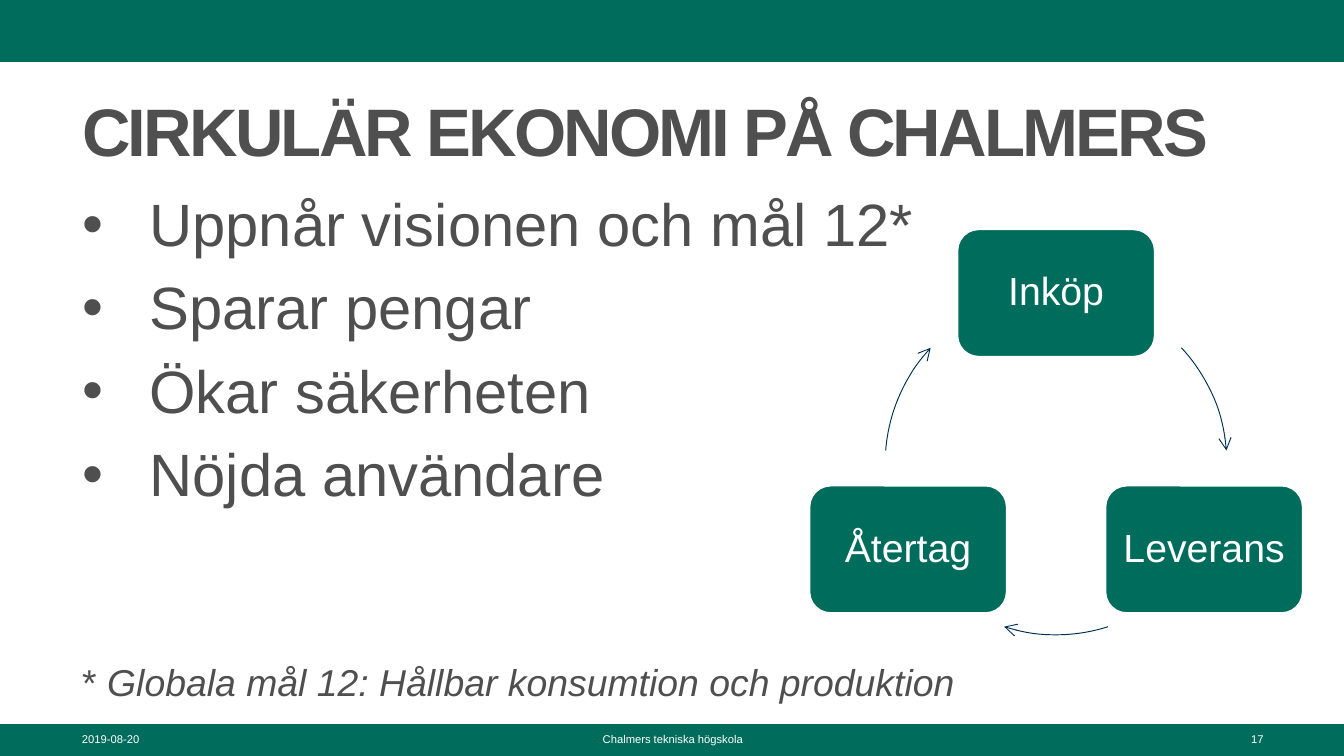
from dataclasses import dataclass
from math import cos, radians, sin

from lxml.etree import SubElement
from pptx import Presentation
from pptx.dml.color import RGBColor
from pptx.enum.shapes import MSO_SHAPE
from pptx.enum.text import MSO_ANCHOR, MSO_AUTO_SIZE, PP_ALIGN
from pptx.oxml.ns import qn
from pptx.util import Cm, Pt


@dataclass(frozen=True)
class Theme:
    font: str = "Arial"
    green: RGBColor = RGBColor.from_string("006C5C")
    grey: RGBColor = RGBColor.from_string("4F4F4F")
    navy: RGBColor = RGBColor.from_string("003050")
    white: RGBColor = RGBColor.from_string("FFFFFF")
    title: Pt = Pt(36)
    bullet: Pt = Pt(32)
    note: Pt = Pt(20)
    node: Pt = Pt(21)
    footer: Pt = Pt(6)


theme = Theme()


def add_run(p, text, color, **values):
    r = p.add_run()
    r.text = text
    r.font.color.rgb = color
    for name, value in {"name": theme.font, **values}.items():
        setattr(r.font, name, value)
    return r


def add_filled(kind, x, y, w, h):
    sp = s.shapes.add_shape(kind, Cm(x), Cm(y), Cm(w), Cm(h))
    sp.shadow.inherit = False
    sp.fill.solid()
    sp.fill.fore_color.rgb = theme.green
    sp.line.fill.background()
    return sp


prs = Presentation()
prs.slide_width, prs.slide_height = Cm(25.4), Cm(14.29)
s = prs.slides.add_slide(prs.slide_layouts[1])
title, body = s.placeholders

for sp, y, h in [(title, 1.7, 1.85), (body, 3.56, 9.68)]:
    sp.left, sp.top, sp.width, sp.height = Cm(1.3), Cm(y), Cm(22.83), Cm(h)
    frame_format = {
        "word_wrap": True,
        "auto_size": MSO_AUTO_SIZE.NONE,
        "vertical_anchor": MSO_ANCHOR.TOP,
    }
    for name, value in frame_format.items():
        setattr(sp.text_frame, name, value)

p = title.text_frame.paragraphs[0]
p.alignment = PP_ALIGN.LEFT
p.line_spacing = Pt(39)
r = add_run(p, "CIRKULÄR EKONOMI PÅ CHALMERS", theme.grey, size=theme.title, bold=True)
r.font._element.set("spc", "-150")

tf = body.text_frame
bullets = ["Uppnår visionen och mål 12*", "Sparar pengar", "Ökar säkerheten", "Nöjda användare"]
for i, text in enumerate(bullets):
    p = tf.add_paragraph() if i else tf.paragraphs[0]
    p.line_spacing = 0.9
    p.space_before = Pt(10 if i else 0)
    pPr = p._p.get_or_add_pPr()
    pPr.set("marL", str(Cm(1.27)))
    pPr.set("indent", str(Cm(-1.27)))
    SubElement(pPr, qn("a:buFont"), typeface=theme.font)
    SubElement(pPr, qn("a:buChar"), char="•")
    add_run(p, text, theme.grey, size=theme.bullet)

p = tf.add_paragraph()
p.line_spacing = 0.9
p.space_before = Pt(83)
pPr = p._p.get_or_add_pPr()
pPr.set("marL", "0")
pPr.set("indent", "0")
SubElement(pPr, qn("a:buNone"))
add_run(p, "*", theme.grey, size=theme.note)
add_run(p, " Globala mål 12: Hållbar konsumtion och produktion", theme.grey, size=theme.note, italic=True)

for y, h in [(0, 1.17), (13.69, 0.6)]:
    add_filled(MSO_SHAPE.RECTANGLE, 0, y, 25.4, h)

footers = [
    ("2019-08-20", 1.3, 5.92, PP_ALIGN.LEFT),
    ("Chalmers tekniska högskola", 8.69, 8.05, PP_ALIGN.CENTER),
    ("17", 18.21, 5.92, PP_ALIGN.RIGHT),
]
for text, x, w, align in footers:
    tf = s.shapes.add_textbox(Cm(x), Cm(13.72), Cm(w), Cm(0.58)).text_frame
    tf.word_wrap = True
    p = tf.paragraphs[0]
    p.alignment = align
    add_run(p, text, theme.white, size=theme.footer)

cx, cy, radius = 19.96, 8.77, 3.23
node_w, node_h = 3.73, 2.41
cycle = [
    ("Inköp", -90, 317.2, 355.5),
    ("Leverans", 30, 72.3, 107.7),
    ("Återtag", 150, 184.5, 222.8),
]
for text, angle, start, end in cycle:
    x = cx + radius * cos(radians(angle)) - node_w / 2
    y = cy + radius * sin(radians(angle)) - node_h / 2
    sp = add_filled(MSO_SHAPE.ROUNDED_RECTANGLE, x, y, node_w, node_h)
    sp.line.color.rgb = theme.white
    sp.line.width = Pt(1)
    tf = sp.text_frame
    node_format = {
        "word_wrap": True,
        "vertical_anchor": MSO_ANCHOR.MIDDLE,
        "margin_left": Cm(0.1),
        "margin_right": Cm(0.1),
    }
    for name, value in node_format.items():
        setattr(tf, name, value)
    p = tf.paragraphs[0]
    p.alignment = PP_ALIGN.CENTER
    p.line_spacing = 0.9
    add_run(p, text, theme.white, size=theme.node)

    arc = add_filled(MSO_SHAPE.ARC, cx - radius, cy - radius, 2 * radius, 2 * radius)
    arc.fill.background()
    arc.adjustments[0] = start * 0.6
    arc.adjustments[1] = end * 0.6
    arc.line.color.rgb = theme.navy
    arc.line.width = Pt(0.5)
    SubElement(arc.line._get_or_add_ln(), qn("a:tailEnd"), type="arrow")

prs.save("out.pptx")
